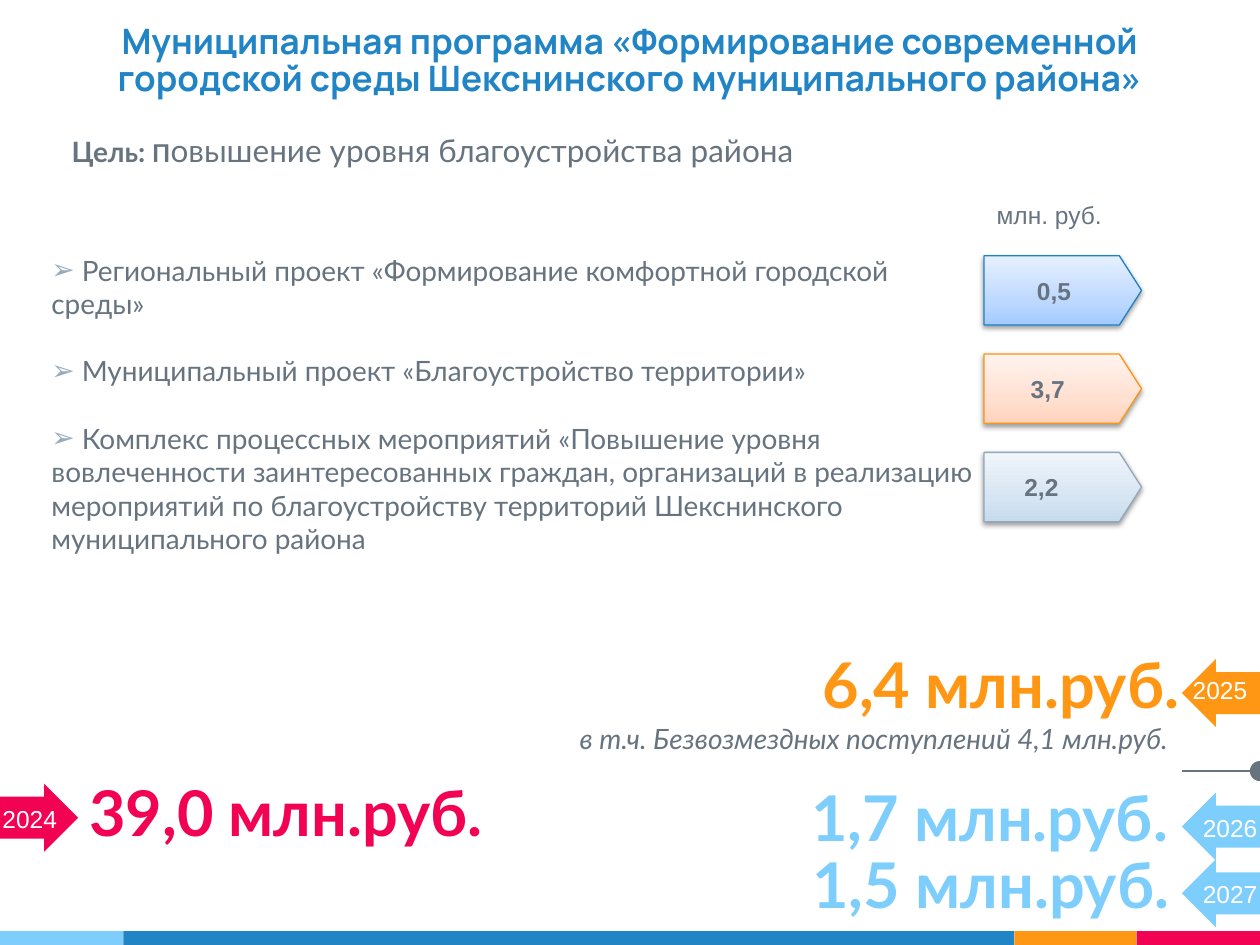
from copy import deepcopy
from itertools import pairwise
from lxml.etree import SubElement
from pptx import Presentation
from pptx.dml.color import RGBColor
from pptx.enum.shapes import MSO_CONNECTOR, MSO_SHAPE
from pptx.enum.text import MSO_ANCHOR, MSO_AUTO_SIZE, PP_ALIGN
from pptx.oxml.ns import qn
from pptx.util import Inches, Pt

BLUE = RGBColor(0x21, 0x85, 0xC5)
SKY = RGBColor(0x7E, 0xCE, 0xFD)
ORANGE = RGBColor(0xFF, 0x97, 0x15)
PINK = RGBColor(0xF2, 0x02, 0x53)
GRAY = RGBColor(0x67, 0x74, 0x80)
STEEL = RGBColor(0x97, 0xAB, 0xBC)
WHITE = RGBColor(0xFF, 0xFF, 0xFF)
LEFT, RIGHT, MID = PP_ALIGN.LEFT, PP_ALIGN.RIGHT, PP_ALIGN.CENTER


def write(para, text, size=16, font="Lato", color=GRAY, bold=False,
          italic=False, align=LEFT):
    para.alignment = align
    for num, line in enumerate(text.split("\n")):
        if num:
            para.add_line_break()
        run = para.add_run()
        run.text = line
        run.font.size = Pt(size)
        run.font.name = font
        run.font.color.rgb = color
        run.font.bold = bold
        run.font.italic = italic


def setup(frame, pad=0.1, anchor=MSO_ANCHOR.TOP):
    frame.word_wrap = True
    frame.auto_size = MSO_AUTO_SIZE.NONE
    frame.vertical_anchor = anchor
    frame.margin_left = frame.margin_right = Inches(pad)
    frame.margin_top = frame.margin_bottom = Inches(pad)
    return frame


def add_box(slide, area, pad=0.1, anchor=MSO_ANCHOR.TOP):
    box = slide.shapes.add_textbox(*map(Inches, area))
    return setup(box.text_frame, pad, anchor)


def add_shape(slide, kind, area, fill=None, turn=0, adjust=()):
    shape = slide.shapes.add_shape(kind, *map(Inches, area))
    shape.shadow.inherit = False
    shape.line.fill.background()
    shape.rotation = turn
    for num, value in enumerate(adjust):
        shape.adjustments[num] = value
    if fill is not None:
        shape.fill.solid()
        shape.fill.fore_color.rgb = fill
    return shape


def add_title(slide):
    title = slide.shapes.title
    title.left, title.top = Inches(0), Inches(0)
    title.width, title.height = Inches(10), Inches(0.89)
    para = setup(title.text_frame, anchor=MSO_ANCHOR.BOTTOM).paragraphs[0]
    para.line_spacing = 0.9
    write(para, "Муниципальная программа «Формирование современной\n"
          "городской среды Шекснинского муниципального района»",
          size=20, font="Manrope", color=BLUE, bold=True, align=MID)


def add_stripe(slide):
    edges = pairwise((0, 0.98, 8.05, 9.02, 10))
    for (left, right), fill in zip(edges, (SKY, BLUE, ORANGE, PINK)):
        add_shape(slide, MSO_SHAPE.RECTANGLE,
                  (left, 7.39, right - left, 0.11), fill)


def add_goal(slide):
    para = add_box(slide, (0.47, 0.94, 8.91, 0.7)).paragraphs[0]
    write(para, "Цель: ", bold=True)
    write(para, "П", size=14, bold=True)
    write(para, "овышение уровня благоустройства района", size=18)


def add_bullet(para):
    props = para._p.get_or_add_pPr()
    props.set("marL", "0")
    props.set("indent", "0")
    tint = SubElement(props, qn("a:buClr"))
    SubElement(tint, qn("a:srgbClr")).set("val", str(STEEL))
    SubElement(props, qn("a:buFont")).set("typeface", "Arial")
    SubElement(props, qn("a:buChar")).set("char", "➢")


def add_list(slide):
    frame = add_box(slide, (0.31, 1.91, 7.58, 3.3))
    items = (
        "Региональный проект «Формирование комфортной городской среды»",
        "Муниципальный проект «Благоустройство территории»",
        "Комплекс процессных мероприятий «Повышение уровня вовлеченности "
        "заинтересованных граждан, организаций в реализацию мероприятий по "
        "благоустройству территорий Шекснинского муниципального района",
    )
    for num, item in enumerate(items):
        para = frame.add_paragraph() if num else frame.paragraphs[0]
        if num:
            para.space_before = Pt(19.2)
        add_bullet(para)
        write(para, " " + item)


def add_shadow(shape):
    effects = shape._element.spPr.find(qn("a:effectLst"))
    shadow = SubElement(effects, qn("a:outerShdw"), blurRad="40000",
                        dist="20000", dir="5400000", rotWithShape="0")
    tint = SubElement(shadow, qn("a:srgbClr"), val="000000")
    SubElement(tint, qn("a:alpha"), val="38000")


def add_tag(slide, top, text, pad, line, tints):
    tag = add_shape(slide, MSO_SHAPE.PENTAGON, (7.81, top, 1.25, 0.55),
                    adjust=(0.32,))
    tag.fill.gradient()
    tag.fill.gradient_angle = 90
    stops = next(tag._element.spPr.iter(qn("a:gsLst")))
    stops.insert(1, deepcopy(stops[0]))
    for stop, tint, place in zip(tag.fill.gradient_stops, tints, (0, 0.35, 1)):
        stop.color.rgb = RGBColor.from_string(tint)
        stop.position = place
    tag.line.color.rgb = RGBColor.from_string(line)
    tag.line.width = Pt(0.75)
    add_shadow(tag)
    frame = setup(tag.text_frame, anchor=MSO_ANCHOR.MIDDLE)
    frame.margin_left = Inches(pad)
    write(frame.paragraphs[0], text, size=14, font="Arial", bold=True)


def add_tags(slide):
    unit = add_box(slide, (7.91, 1.59, 0.95, 0.25), pad=0)
    write(unit.paragraphs[0], "млн. руб.", size=14, font="Arial")
    tags = (
        ("0,5", 0.42, "1C83C5", ("A3CAFF", "BED9FF", "E6F0FF")),
        ("3,7", 0.37, "FF940F", ("FFD3BD", "FFE0D1", "FFF3EE")),
        ("2,2", 0.32, "93A7B9", ("C6DBEE", "D7E5F2", "EFF5FB")),
    )
    for num, tag in enumerate(tags):
        add_tag(slide, 2.03 + 0.78 * num, *tag)


def add_year(slide, year, sum_text, color, area, arrow, label, align, turn):
    frame = add_box(slide, area, anchor=MSO_ANCHOR.BOTTOM)
    write(frame.paragraphs[0], sum_text, size=36, color=color, bold=True,
          align=align)
    add_shape(slide, MSO_SHAPE.RIGHT_ARROW, (*arrow, 0.62, 0.54), color,
              turn, (0.618, 0.5))
    mark = add_box(slide, (*label, 0.5, 0.24), pad=0)
    write(mark.paragraphs[0], year, size=14, font="Arial", color=WHITE,
          align=align)


def add_years(slide):
    add_year(slide, "2024", "39,0 млн.руб.", PINK, (0.61, 5.86, 3.77, 0.98),
             (0, 6.22), (0.02, 6.38), LEFT, 0)
    years = (
        ("2025", "6,4 млн.руб.", ORANGE, 9.46, 4.84, 5.23, 9.4, 5.36),
        ("2026", "1,7 млн.руб.", SKY, 9.37, 5.9, 6.29, 9.48, 6.45),
        ("2027", "1,5 млн.руб.", SKY, 9.38, 6.43, 6.82, 9.48, 6.98),
    )
    for year, total, color, right, top, tip, left, row in years:
        add_year(slide, year, total, color, (right - 3.9, top, 3.9, 0.98),
                 (9.38, tip), (left, row), RIGHT, 180)
    note = add_box(slide, (3.2, 5.63, 6.17, 0.51))
    write(note.paragraphs[0], "в т.ч. Безвозмездных поступлений 4,1 млн.руб.",
          italic=True, align=RIGHT)


def add_pin(slide):
    add_shape(slide, MSO_SHAPE.FLOWCHART_CONNECTOR,
              (9.92, 6.04, 0.16, 0.16), GRAY)
    ends = map(Inches, (10.01, 6.12, 9.38, 6.12))
    line = slide.shapes.add_connector(MSO_CONNECTOR.STRAIGHT, *ends)
    line.line.color.rgb = GRAY
    line.line.width = Pt(0.75)
    SubElement(line._element.spPr, qn("a:effectLst"))


def main():
    deck = Presentation()
    deck.slide_width, deck.slide_height = Inches(10), Inches(7.5)
    slide = deck.slides.add_slide(deck.slide_layouts[5])
    add_stripe(slide)
    add_title(slide)
    add_goal(slide)
    add_list(slide)
    add_years(slide)
    add_pin(slide)
    add_tags(slide)
    deck.save("out.pptx")


if __name__ == "__main__":
    main()
